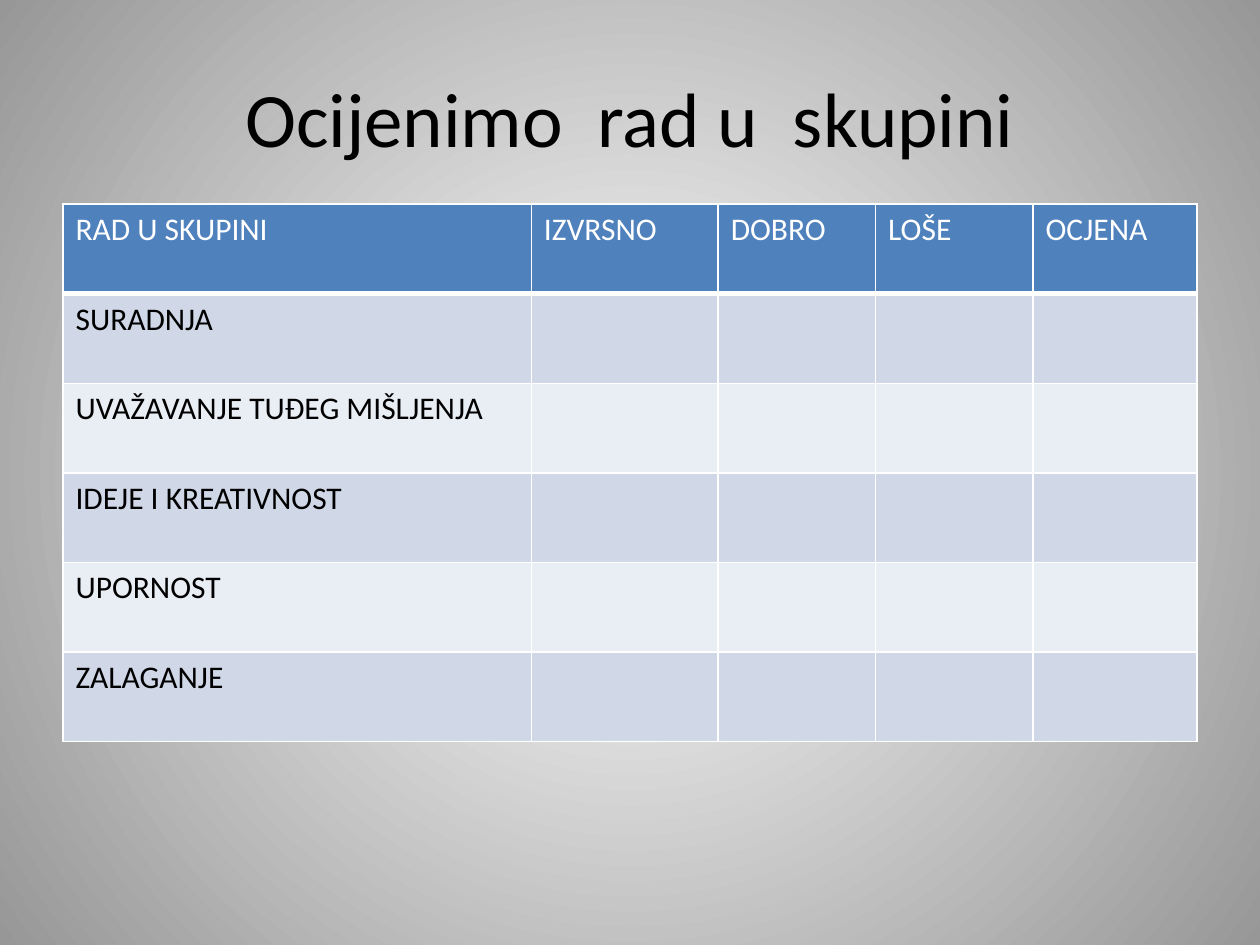
from pptx import Presentation
from pptx.dml.color import RGBColor
from pptx.enum.text import MSO_ANCHOR as Anchor, PP_ALIGN as Align
from pptx.oxml import parse_xml
from pptx.oxml.ns import nsdecls, qn
from pptx.util import Pt

WHITE = RGBColor(0xFF, 0xFF, 0xFF)
BLACK = RGBColor(0x00, 0x00, 0x00)
GREY = RGBColor(0x97, 0x97, 0x97)
HEADER_BLUE = RGBColor(0x4F, 0x81, 0xBD)
BAND_DARK = RGBColor(0xD0, 0xD8, 0xE8)
BAND_LIGHT = RGBColor(0xE9, 0xED, 0xF4)

TITLE_FORMAT = {"name": "Calibri", "size": Pt(44)}
CELL_FORMAT = {"name": "Calibri", "size": Pt(18)}

GRADES = ["RAD U SKUPINI", "IZVRSNO", "DOBRO", "LOŠE", "OCJENA"]
CRITERIA = [
    "SURADNJA",
    "UVAŽAVANJE TUĐEG MIŠLJENJA",
    "IDEJE I KREATIVNOST",
    "UPORNOST",
    "ZALAGANJE",
]
COLUMN_WIDTHS = [267.6, 106.8, 90, 90, 93.6]


def format_font(font, values, color):
    for key, value in values.items():
        setattr(font, key, value)
    font.color.rgb = color


def paint_background(slide):
    fill = slide.background.fill
    fill.gradient()
    for stop, color, position in zip(fill.gradient_stops, (WHITE, GREY), (0, 1)):
        stop.color.rgb = color
        stop.position = position
    gradient = next(slide.element.iter(qn("a:gradFill")))
    radial = parse_xml(
        f'<a:path {nsdecls("a")} path="circle">'
        '<a:fillToRect l="50000" t="50000" r="50000" b="50000"/></a:path>'
    )
    gradient.replace(gradient.find(qn("a:lin")), radial)


def place_title(slide, left, top, width, height):
    title = slide.shapes.title
    title.left, title.top = Pt(left), Pt(top)
    title.width, title.height = Pt(width), Pt(height)
    title.text_frame.vertical_anchor = Anchor.MIDDLE
    heading = title.text_frame.paragraphs[0]
    heading.alignment = Align.CENTER
    run = heading.add_run()
    run.text = "Ocijenimo  rad u  skupini"
    format_font(run.font, TITLE_FORMAT, BLACK)


def draw_borders(cell, bottom):
    properties = cell._tc.get_or_add_tcPr()
    for side, weight in (("L", 1), ("R", 1), ("T", 1), ("B", bottom)):
        properties.append(parse_xml(
            f'<a:ln{side} {nsdecls("a")} w="{Pt(weight)}"><a:solidFill>'
            f'<a:srgbClr val="{WHITE}"/></a:solidFill></a:ln{side}>'
        ))


def place_rubric(slide, left, top, width, height):
    entries = [GRADES] + [[name] + [""] * (len(GRADES) - 1) for name in CRITERIA]
    rubric = slide.shapes.add_table(
        len(entries), len(GRADES), Pt(left), Pt(top), Pt(width), Pt(height)
    ).table
    for column, share in zip(rubric.columns, COLUMN_WIDTHS):
        column.width = Pt(share * width / sum(COLUMN_WIDTHS))
    for index, entry in enumerate(entries):
        rubric.rows[index].height = Pt(height / len(entries))
        is_header = index == 0
        band = HEADER_BLUE if is_header else (BAND_LIGHT, BAND_DARK)[index % 2]
        for position, wording in enumerate(entry):
            cell = rubric.cell(index, position)
            draw_borders(cell, 3 if is_header else 1)
            cell.fill.solid()
            cell.fill.fore_color.rgb = band
            if wording:
                run = cell.text_frame.paragraphs[0].add_run()
                run.text = wording
                format_font(run.font, CELL_FORMAT, WHITE if is_header else BLACK)
                run.font.bold = False


def main():
    deck = Presentation()
    deck.slide_width, deck.slide_height = Pt(720), Pt(540)
    slide = deck.slides.add_slide(deck.slide_layouts[5])
    paint_background(slide)
    place_title(slide, 36, 21.6, 648, 90)
    place_rubric(slide, 36, 116.64, 648, 307.2)
    deck.save("out.pptx")


if __name__ == "__main__":
    main()
